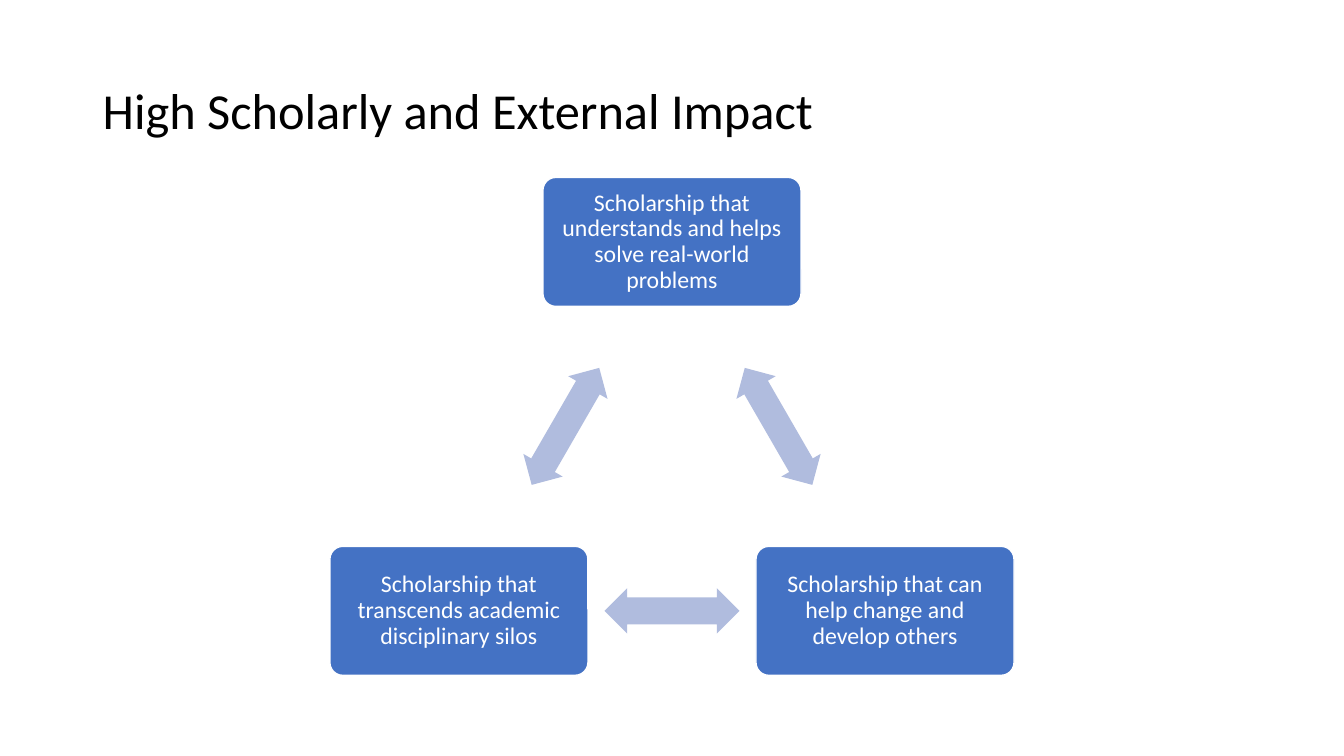
from math import cos, radians, sin

from pptx import Presentation
from pptx.dml.color import RGBColor
from pptx.enum.shapes import MSO_SHAPE
from pptx.enum.text import MSO_ANCHOR, PP_ALIGN
from pptx.util import Inches, Pt

ROUNDED = MSO_SHAPE.ROUNDED_RECTANGLE
DOUBLE_ARROW = MSO_SHAPE.LEFT_RIGHT_ARROW
MIDDLE = MSO_ANCHOR.MIDDLE
LEFT, CENTER = PP_ALIGN.LEFT, PP_ALIGN.CENTER

BLACK = RGBColor(0x00, 0x00, 0x00)
WHITE = RGBColor(0xFF, 0xFF, 0xFF)
BLUE = RGBColor(0x44, 0x72, 0xC4)
PALE_BLUE = RGBColor(0xB0, 0xBC, 0xDE)

FONT = "Calibri"
SLIDE_W, SLIDE_H = Inches(13.33), Inches(7.5)
CYCLE_X, CYCLE_Y = SLIDE_W * 0.5, Inches(4.84)
RADIUS = Inches(2.44)
BOX_W, BOX_H = Inches(2.56), Inches(1.28)
ARROW_W, ARROW_H = Inches(1.34), Inches(0.45)

TITLE = "High Scholarly and External Impact"
IMPACTS = [
    "Scholarship that understands and helps solve real-world problems",
    "Scholarship that can help change and develop others",
    "Scholarship that transcends academic disciplinary silos",
]


def write(frame, wording, size, color, align):
    """Fill a text frame with one vertically centred paragraph."""
    frame.word_wrap = True
    frame.vertical_anchor = MIDDLE
    paragraph = frame.paragraphs[0]
    paragraph.alignment = align
    paragraph.line_spacing = 0.9
    run = paragraph.add_run()
    run.text = wording
    run.font.name = FONT
    run.font.size = Pt(size)
    run.font.color.rgb = color


def add_title(slide):
    """Place the heading across the top of the slide."""
    heading = slide.shapes.add_textbox(
        Inches(0.92), Inches(0.4), Inches(11.5), Inches(1.45))
    write(heading.text_frame, TITLE, 36, BLACK, LEFT)


def add_on_cycle(slide, kind, angle, radius, width, height, fill):
    """Centre a filled shape at a clockwise angle from the top of the cycle."""
    x = CYCLE_X + radius * sin(radians(angle))
    y = CYCLE_Y - radius * cos(radians(angle))
    shape = slide.shapes.add_shape(
        kind, int(x - width / 2), int(y - height / 2), width, height)
    shape.shadow.inherit = False
    shape.fill.solid()
    shape.fill.fore_color.rgb = fill
    return shape


def add_impact(slide, wording, angle):
    """Draw one rounded box of the cycle with its wording."""
    box = add_on_cycle(slide, ROUNDED, angle, RADIUS, BOX_W, BOX_H, BLUE)
    box.adjustments[0] = 0.1
    box.line.color.rgb = WHITE
    box.line.width = Pt(1)
    frame = box.text_frame
    frame.margin_left = frame.margin_right = Inches(0.07)
    frame.margin_top = frame.margin_bottom = Inches(0.07)
    write(frame, wording, 17, WHITE, CENTER)


def add_link(slide, angle):
    """Draw the double arrow midway between two neighbouring boxes."""
    arrow = add_on_cycle(
        slide, DOUBLE_ARROW, angle, RADIUS / 2, ARROW_W, ARROW_H, PALE_BLUE)
    arrow.adjustments[0] = 0.6
    arrow.adjustments[1] = 0.5
    arrow.line.fill.background()
    arrow.rotation = angle


def main():
    """Build and save the impact slide."""
    deck = Presentation()
    deck.slide_width, deck.slide_height = SLIDE_W, SLIDE_H
    slide = deck.slides.add_slide(deck.slide_layouts[6])
    add_title(slide)
    step = 360 / len(IMPACTS)
    for position, wording in enumerate(IMPACTS):
        angle = position * step
        add_impact(slide, wording, angle)
        add_link(slide, angle + step / 2)
    deck.save("out.pptx")


if __name__ == "__main__":
    main()
